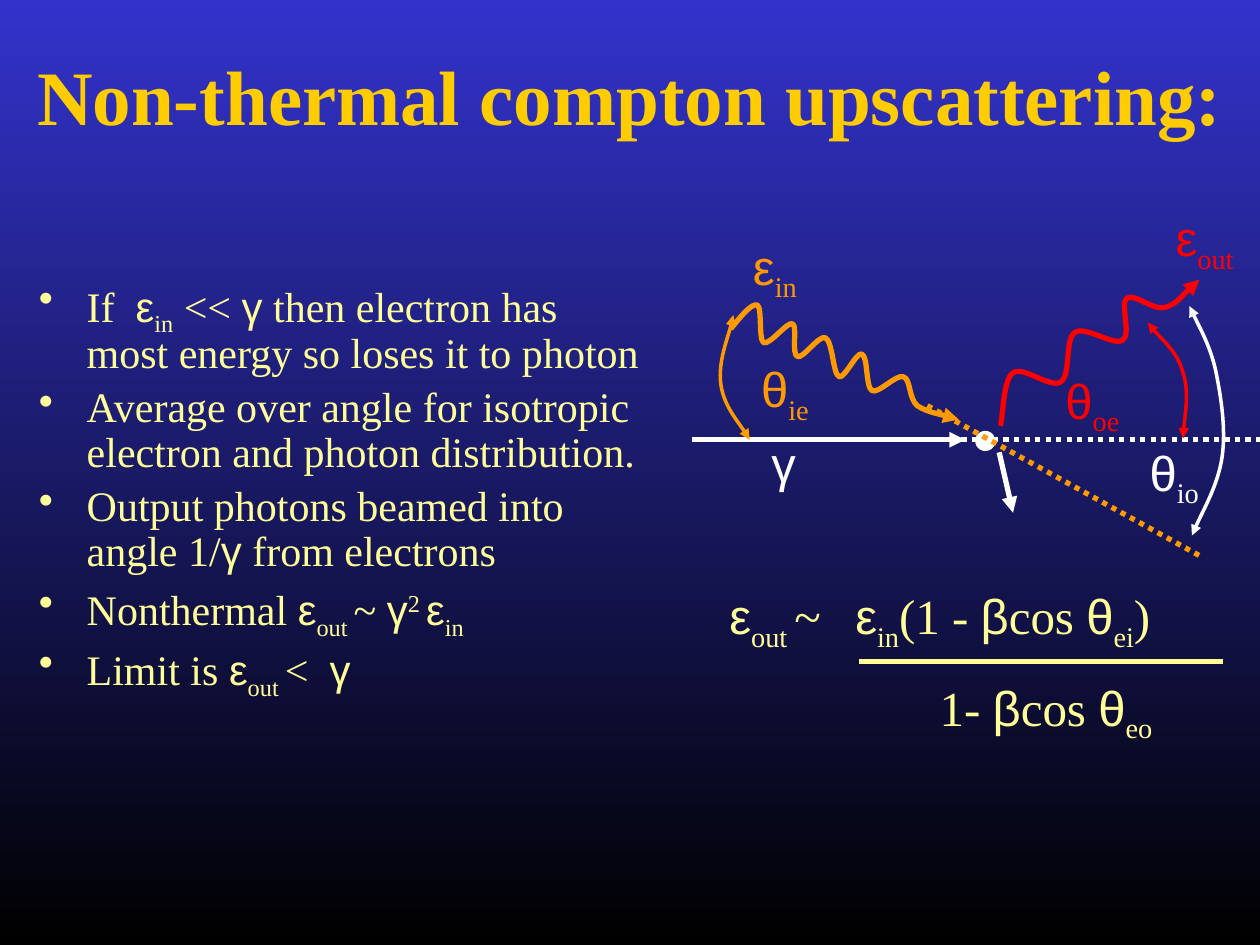
"""Build the slide on non-thermal Compton upscattering."""
from itertools import groupby

from lxml.etree import SubElement
from pptx import Presentation
from pptx.dml.color import RGBColor
from pptx.enum.dml import MSO_LINE
from pptx.enum.shapes import MSO_CONNECTOR, MSO_SHAPE
from pptx.enum.text import MSO_ANCHOR, PP_ALIGN as Align
from pptx.oxml.ns import qn
from pptx.util import Inches, Pt

COLORS = {
    "sky": "3333CC", "night": "000000", "title": "FFCC00", "text": "FFFF99",
    "electron": "FFFFFF", "incoming": "FF9900", "outgoing": "FF0000",
}
RGB = {name: RGBColor.from_string(value) for name, value in COLORS.items()}
BASELINES = {"_": "-25000", "^": "30000"}


def write(frame, lines, color, size, bold=False, align=Align.CENTER, margins=(0,),
          hanging=0, bullet=None, tab=None, space=0, leading=None):
    """Fill a frame; | parts a line into pieces, _ lowers and ^ raises a piece."""
    frame.word_wrap = True
    for index, line in enumerate(lines):
        paragraph = frame.add_paragraph() if index else frame.paragraphs[0]
        paragraph.alignment = align
        paragraph.line_spacing = leading
        paragraph.space_before = Pt(space if index else 0)
        props = paragraph._p.get_or_add_pPr()
        props.set("marL", str(Inches(margins[index % len(margins)])))
        props.set("indent", str(Inches(-hanging)))
        if bullet:
            SubElement(props, qn("a:buChar")).set("char", bullet)
        if tab:
            stop = SubElement(SubElement(props, qn("a:tabLst")), qn("a:tab"))
            stop.set("pos", str(Inches(tab)))
            stop.set("algn", "l")
        for piece in line.split("|"):
            baseline = BASELINES.get(piece[:1])
            letters = piece[1:] if baseline else piece
            for greek, group in groupby(letters, key=lambda letter: letter in "βγεθ"):
                run = paragraph.add_run()
                run.text = "".join(group)
                run.font.name = "Arial" if greek else "Times New Roman"
                run.font.size = Pt(size)
                run.font.bold = bold
                run.font.color.rgb = RGB[color]
                if baseline:
                    run.font._element.set("baseline", baseline)


def stroke(shape, color, width, ends=(), dotted=False):
    """Format a line or curve and put arrowheads on the given ends."""
    shape.line.color.rgb = RGB[color]
    shape.line.width = Pt(width)
    if dotted:
        shape.line.dash_style = MSO_LINE.ROUND_DOT
    properties = shape._element.spPr
    outline = properties.find(qn("a:ln"))
    for end in ends:
        SubElement(outline, qn(f"a:{end}End")).set("type", "triangle")
    SubElement(properties, qn("a:effectLst"))


deck = Presentation()
deck.slide_width, deck.slide_height = Inches(10), Inches(7.5)
slide = deck.slides.add_slide(deck.slide_layouts[5])
shapes = slide.shapes

backdrop = slide.background.fill
backdrop.gradient()
backdrop.gradient_angle = 270
for stop, name, position in zip(backdrop.gradient_stops, ("sky", "night"), (0, 1)):
    stop.color.rgb = RGB[name]
    stop.position = position

title = shapes.title
title.left, title.top, title.width, title.height = map(Inches, (0, 0.13, 10, 1.25))
title.text_frame.vertical_anchor = MSO_ANCHOR.MIDDLE
write(title.text_frame, ["Non-thermal compton upscattering:"], "title", 44, bold=True)

points = shapes.add_textbox(Inches(0.21), Inches(2.18), Inches(5.02), Inches(4.08))
write(points.text_frame, [
    "If  ε|_in| << γ then electron has most energy so loses it to photon",
    "Average over angle for isotropic electron and photon distribution.",
    "Output photons beamed into angle 1/γ from electrons",
    "Nonthermal ε|_out |~ γ|^2 |ε|_in",
    "Limit is ε|_out |<  γ",
], "text", 24, align=Align.LEFT, margins=(0.38,), hanging=0.38, bullet="•",
    space=4.8, leading=0.9)

equation = shapes.add_textbox(Inches(4.73), Inches(4.6), Inches(5.59), Inches(1.97))
write(equation.text_frame, [
    "ε|_out |~\tε|_in|(1 - βcos θ|_ei|)",
    "1- βcos θ|_eo",
], "text", 28, align=Align.LEFT, margins=(0.96, 2.63), tab=2.07, space=14)

electron = shapes.add_shape(
    MSO_SHAPE.OVAL, Inches(7.74), Inches(3.42), Inches(0.16), Inches(0.16))
electron.shadow.inherit = False
electron.fill.solid()
electron.fill.fore_color.rgb = RGB["electron"]
electron.line.fill.background()

LABELS = [
    ("γ", "electron", 5.3, 3.39),
    ("ε|_in", "incoming", 5.23, 1.83),
    ("ε|_out", "outgoing", 8.64, 1.6),
    ("θ|_ie", "incoming", 5.31, 2.8),
    ("θ|_io", "electron", 8.4, 3.46),
    ("θ|_oe", "outgoing", 7.75, 2.89),
]
for symbol, color, left, top in LABELS:
    label = shapes.add_textbox(Inches(left), Inches(top), Inches(1.84), Inches(0.57))
    write(label.text_frame, [symbol], color, 28)

LINES = [
    ((6.82, 5.25, 9.71, 5.25), "text", (), False),
    ((7.93, 3.59, 8.04, 4.07), "electron", ("tail",), False),
    ((5.49, 3.49, 7.66, 3.49), "electron", ("tail",), False),
    ((7.38, 3.49, 10, 3.49), "electron", (), True),
    ((7.36, 3.22, 9.52, 4.41), "incoming", (), True),
]
for route, color, ends, dotted in LINES:
    line = shapes.add_connector(MSO_CONNECTOR.STRAIGHT, *map(Inches, route))
    stroke(line, color, 3, ends, dotted)

PHOTON, ANGLE = (3, ("tail",)), (2, ("head", "tail"))
CURVES = [
    ("incoming", PHOTON, [
        (5.8, 2.61), (5.88, 2.51), (5.96, 2.41), (6.01, 2.42),
        (6.05, 2.44), (6.02, 2.69), (6.06, 2.72), (6.11, 2.74), (6.25, 2.55), (6.29, 2.57),
        (6.33, 2.58), (6.28, 2.82), (6.33, 2.83), (6.37, 2.85), (6.5, 2.66), (6.55, 2.68),
        (6.61, 2.71), (6.61, 2.97), (6.66, 2.99), (6.7, 3.01), (6.8, 2.79), (6.84, 2.81),
        (6.89, 2.83), (6.87, 3.07), (6.92, 3.1), (6.97, 3.13), (7.11, 2.97), (7.17, 2.99),
        (7.23, 3.01), (7.21, 3.16), (7.28, 3.22), (7.36, 3.27), (7.55, 3.31), (7.61, 3.33)]),
    ("outgoing", PHOTON, [
        (7.94, 3.38), (7.96, 3.32), (7.96, 3.01), (8.04, 2.96),
        (8.12, 2.9), (8.34, 3.09), (8.42, 3.03), (8.5, 2.98), (8.45, 2.69), (8.53, 2.64),
        (8.61, 2.58), (8.84, 2.75), (8.91, 2.7), (8.98, 2.66), (8.89, 2.41), (8.94, 2.37),
        (9, 2.32), (9.15, 2.47), (9.25, 2.44), (9.34, 2.41), (9.46, 2.26), (9.52, 2.22)]),
    ("electron", ANGLE, [
        (9.44, 2.43), (9.48, 2.52), (9.61, 2.76), (9.65, 2.95),
        (9.69, 3.15), (9.73, 3.4), (9.7, 3.62), (9.67, 3.84), (9.51, 4.12), (9.46, 4.25)]),
    ("incoming", ANGLE, [
        (5.82, 2.5), (5.81, 2.59), (5.7, 2.87), (5.72, 3.04),
        (5.74, 3.21), (5.9, 3.4), (5.95, 3.49)]),
    ("outgoing", ANGLE, [
        (9.39, 3.48), (9.39, 3.39), (9.44, 3.11), (9.39, 2.96),
        (9.35, 2.8), (9.17, 2.65), (9.11, 2.56)]),
]
for color, (width, ends), knots in CURVES:
    start, *rest = [(Inches(x), Inches(y)) for x, y in knots]
    builder = shapes.build_freeform(*start)
    builder.add_line_segments(rest, close=False)
    curve = builder.convert_to_shape()
    curve.fill.background()
    outline = curve._element.find(".//" + qn("a:path"))
    segments = outline.findall(qn("a:lnTo"))
    for first in range(0, len(segments), 3):
        bezier = SubElement(outline, qn("a:cubicBezTo"))
        for segment in segments[first:first + 3]:
            bezier.append(segment[0])
            outline.remove(segment)
    stroke(curve, color, width, ends)

deck.save("out.pptx")
